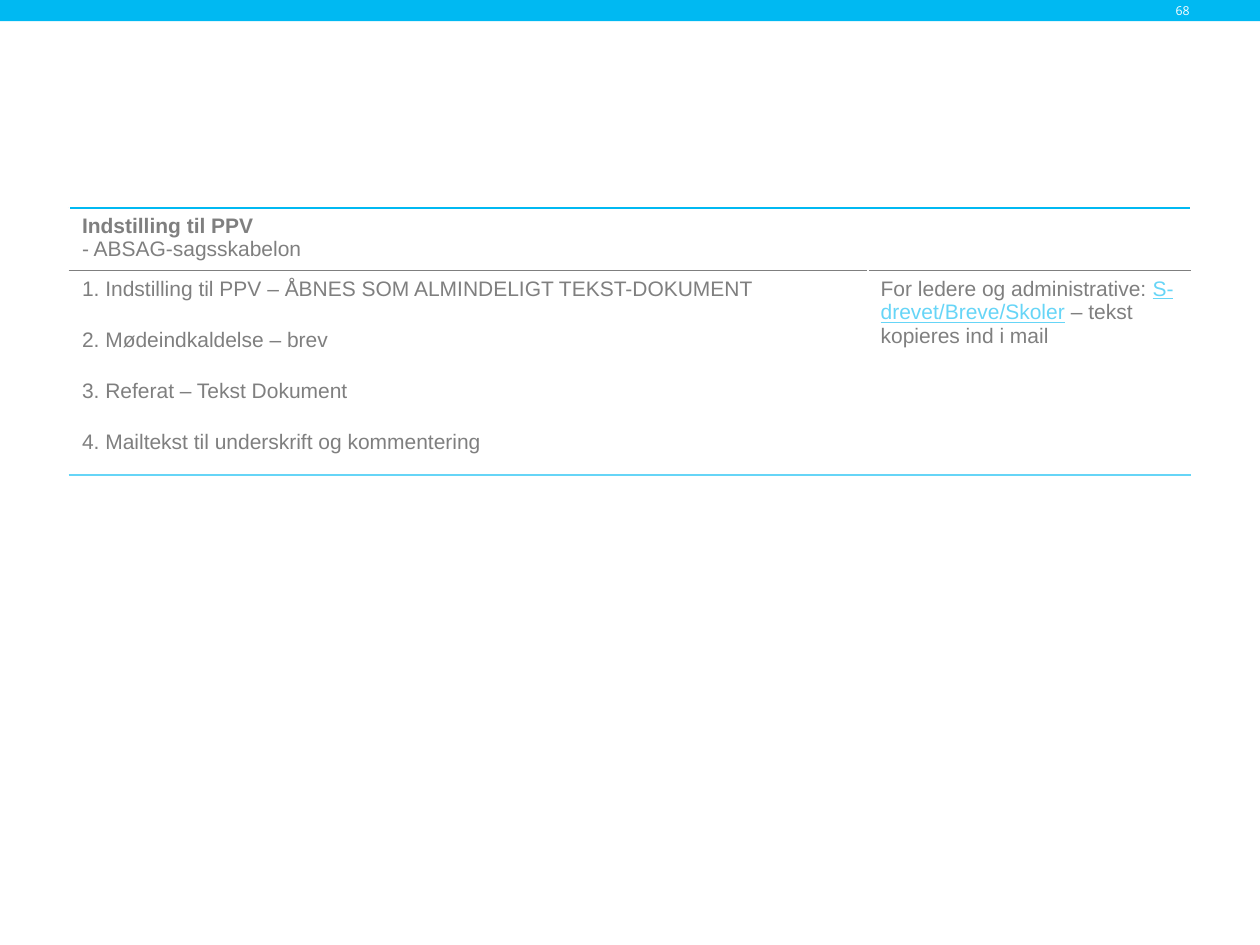
import pptx
import pptx.dml.color
import pptx.enum.shapes
import pptx.enum.text
import pptx.oxml
import pptx.oxml.ns
import pptx.util
from pptx.util import Cm, Pt

COLORS = {"bar": "00B9F2", "link": "66D5F7", "text": "7F7F7F", "white": "FFFFFF"}


def style_font(font, size, name, color):
    font.size = Pt(size)
    font.name = name
    font.color.rgb = pptx.dml.color.RGBColor.from_string(COLORS[color])


def add_border(cell, side, color, width):
    """Draw one cell edge; side is T or B, and T must come before B."""
    line = pptx.oxml.parse_xml(
        f'<a:ln{side} {pptx.oxml.ns.nsdecls("a")} w="{Pt(width)}"><a:solidFill>'
        f'<a:srgbClr val="{COLORS[color]}"/></a:solidFill></a:ln{side}>'
    )
    properties = cell._tc.get_or_add_tcPr()
    properties.insert(len(properties) - 1, line)  # borders precede the fill


deck = pptx.Presentation()
deck.slide_width, deck.slide_height = Cm(25.4), Cm(19.05)
page = deck.slides.add_slide(deck.slide_layouts[6])

# Top bar and page number
bar_height = Cm(0.43)
bar = page.shapes.add_shape(
    pptx.enum.shapes.MSO_SHAPE.RECTANGLE, 0, 0, deck.slide_width, bar_height
)
bar.shadow.inherit = False
bar.fill.solid()
bar.fill.fore_color.rgb = pptx.dml.color.RGBColor.from_string(COLORS["bar"])
bar.line.fill.background()

box = page.shapes.add_textbox(Cm(23.11), 0, Cm(0.87), bar_height)
frame = box.text_frame
frame.word_wrap = True
frame.margin_left = frame.margin_right = frame.margin_top = frame.margin_bottom = 0
frame.vertical_anchor = pptx.enum.text.MSO_ANCHOR.MIDDLE
para = frame.paragraphs[0]
para.text = "68"
para.alignment = pptx.enum.text.PP_ALIGN.RIGHT
style_font(para.font, 7, "Open Sans", "white")

# Table of templates
steps = [
    "1. Indstilling til PPV – ÅBNES SOM ALMINDELIGT TEKST-DOKUMENT",
    "2. Mødeindkaldelse – brev",
    "3. Referat – Tekst Dokument",
    "4. Mailtekst til underskrift og kommentering",
]
table = page.shapes.add_table(
    len(steps) + 1, 2, Cm(1.4), Cm(4.19), Cm(22.6), Cm(5.34)
).table
table.first_row = table.horz_banding = False
table.columns[0].width, table.columns[1].width = Cm(16.1), Cm(6.5)
for row in table.rows:
    row.height = Cm(1.03)
table.rows[0].height = Cm(1.2)

header, note = table.cell(0, 0), table.cell(1, 1)
header.merge(table.cell(0, 1))
note.merge(table.cell(len(steps), 1))

header.text = "Indstilling til PPV\n- ABSAG-sagsskabelon"
header.text_frame.paragraphs[0].font.bold = True
for index, step in enumerate(steps, start=1):
    table.cell(index, 0).text = step
for text in ("For ledere og administrative: ", "S-drevet/Breve/Skoler", " – tekst kopieres ind i mail"):
    span = note.text_frame.paragraphs[0].add_run()
    span.text = text

for cell in table.iter_cells():
    cell.fill.background()
    for para in cell.text_frame.paragraphs:
        style_font(para.font, 12, "Arial", "text")

link = note.text_frame.paragraphs[0].runs[1]
link.font.underline = True
link.font.color.rgb = pptx.dml.color.RGBColor.from_string(COLORS["link"])

for column in range(2):
    add_border(table.cell(0, column), "T", "bar", 1.5)
    add_border(table.cell(0, column), "B", "text", 0.75)
    add_border(table.cell(1, column), "T", "text", 0.75)
    add_border(table.cell(len(steps), column), "B", "link", 1.5)
add_border(note, "B", "link", 1.5)

deck.save("out.pptx")
